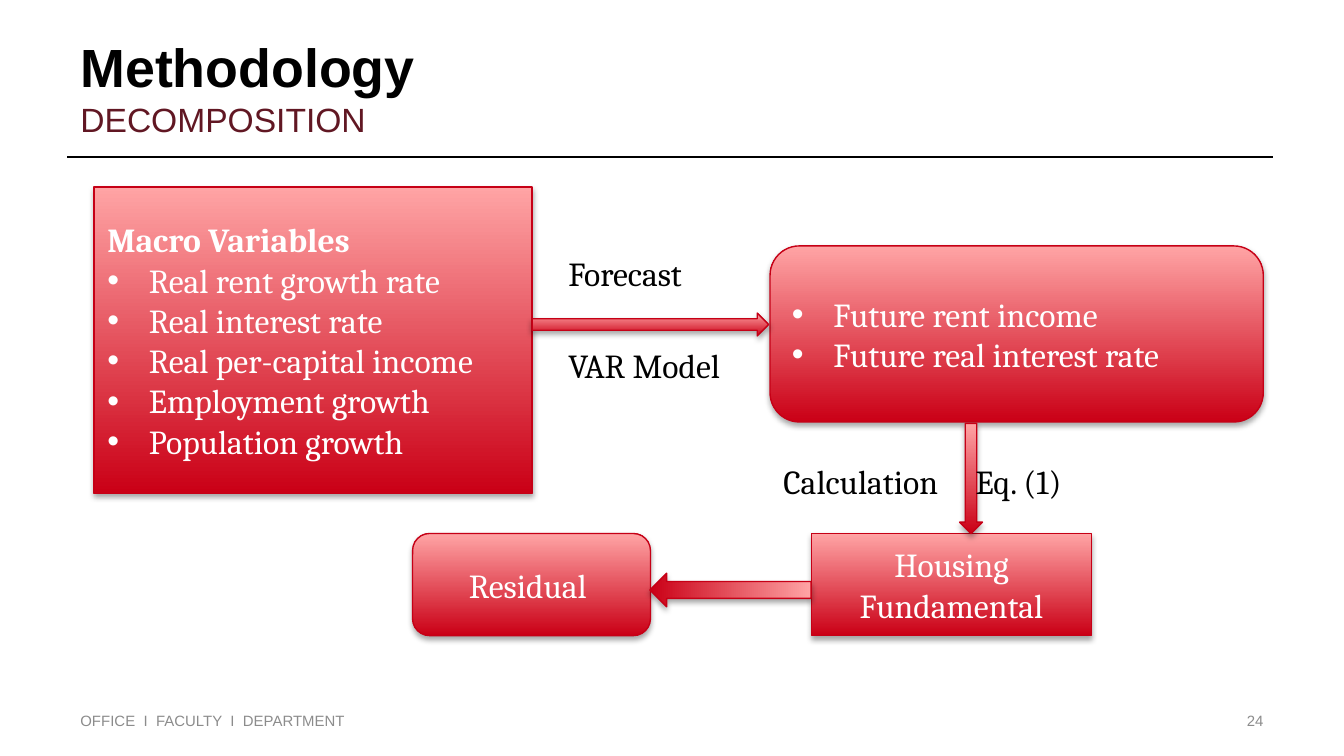
import pptx
import pptx.util
import pptx.dml.color
import pptx.enum.shapes
import pptx.enum.text
import pptx.oxml
import pptx.oxml.ns
from lxml import etree

Inches = pptx.util.Inches
Pt = pptx.util.Pt
RGB = pptx.dml.color.RGBColor.from_string
Shape = pptx.enum.shapes.MSO_SHAPE
Align = pptx.enum.text.PP_ALIGN
Anchor = pptx.enum.text.MSO_ANCHOR
qn = pptx.oxml.ns.qn

COLORS = {
    "black": "000000",
    "white": "FFFFFF",
    "gray": "8C8C8C",
    "maroon": "611723",
    "red": "CA0016",
    "pink": "FFA4A5",
    "outline": "C60016",
}
INDENT = Inches(0.31)

deck = pptx.Presentation()
deck.slide_width = Inches(10)
deck.slide_height = Inches(10 * 9 / 16)
slide = deck.slides.add_slide(deck.slide_layouts[6])


def write(shape, lines, font="Cambria", size=18, color="black", bold=False, align=Align.LEFT,
          anchor=Anchor.MIDDLE, bullets_from=None, gap=0, tab=None, inset=0.1):
    """Fill a shape with one paragraph per line; gap is the space between them in points."""
    frame = shape.text_frame
    frame.word_wrap = True
    frame.vertical_anchor = anchor
    frame.margin_left = Inches(inset)
    for i, line in enumerate(lines):
        paragraph = frame.paragraphs[0] if i == 0 else frame.add_paragraph()
        paragraph.text = line
        paragraph.alignment = align
        if i and gap:
            paragraph.space_before = Pt(gap)
        properties = paragraph._p.get_or_add_pPr()
        bulleted = bullets_from is not None and i >= bullets_from
        if bulleted:
            properties.set("marL", str(INDENT))
            properties.set("indent", str(-INDENT))
            etree.SubElement(properties, qn("a:buFont"), typeface="Arial")
            etree.SubElement(properties, qn("a:buChar"), char="•")
        if tab:
            stops = etree.SubElement(properties, qn("a:tabLst"))
            etree.SubElement(stops, qn("a:tab"), pos=str(Inches(tab)), algn="l")
        paragraph.font.name = font
        paragraph.font.size = Pt(size)
        paragraph.font.bold = bold and not bulleted
        paragraph.font.color.rgb = RGB(COLORS[color])


def add_glossy(kind, *place):
    """Add a shape with the red gradient, thin outline and soft shadow."""
    shape = slide.shapes.add_shape(kind, *map(Inches, place))
    shape.fill.gradient()
    shape.fill.gradient_angle = 90
    for stop, name in zip(shape.fill.gradient_stops, ("red", "pink")):
        stop.color.rgb = RGB(COLORS[name])
    shape.line.color.rgb = RGB(COLORS["outline"])
    shape.line.width = Pt(0.75)
    shape.shadow.inherit = False
    effects = shape._element.spPr.find(qn("a:effectLst"))
    shadow = etree.SubElement(effects, qn("a:outerShdw"), blurRad=str(Pt(3.1)),
                              dist=str(Pt(1.8)), dir="5400000", rotWithShape="0")
    tint = etree.SubElement(shadow, qn("a:srgbClr"), val=COLORS["black"])
    etree.SubElement(tint, qn("a:alpha"), val="35000")
    return shape


# Header rule
rule = slide.shapes.add_connector(pptx.enum.shapes.MSO_CONNECTOR.STRAIGHT, Inches(0.5),
                                  Inches(1.17), Inches(9.47), Inches(1.17))
rule.line.color.rgb = RGB(COLORS["black"])
rule.line.width = Pt(1)
etree.SubElement(rule._element.spPr, qn("a:effectLst"))

# Flow boxes
boxes = [
    (Shape.RECTANGLE, (0.7, 1.39, 3.26, 2.28),
     ["Macro Variables", "Real rent growth rate", "Real interest rate",
      "Real per-capital income", "Employment growth", "Population growth"],
     dict(bold=True, bullets_from=1)),
    (Shape.ROUNDED_RECTANGLE, (5.73, 1.83, 3.67, 1.31),
     ["Future rent income", "Future real interest rate"], dict(bullets_from=0)),
    (Shape.RECTANGLE, (6.04, 3.97, 2.08, 0.76), ["Housing Fundamental"],
     dict(align=Align.CENTER)),
    (Shape.ROUNDED_RECTANGLE, (3.07, 3.97, 1.77, 0.76), ["Residual "],
     dict(align=Align.CENTER)),
]
for kind, place, lines, style in boxes:
    write(add_glossy(kind, *place), lines, color="white", **style)

# Block arrows between the boxes
add_glossy(Shape.RIGHT_ARROW, 3.96, 2.33, 1.76, 0.17)
add_glossy(Shape.DOWN_ARROW, 7.14, 3.15, 0.17, 0.82)
residual_arrow = add_glossy(Shape.DOWN_ARROW, 5.31, 3.79, 0.25, 1.2)
residual_arrow.rotation = 90

# Heading, arrow labels and footer
heading = dict(font="Arial")
footer = dict(font="Arial", size=8, color="gray")
texts = [
    ((0.5, 0.23, 7, 0.53), ["Methodology"], dict(heading, size=28.8, bold=True)),
    ((0.5, 0.69, 7, 0.44), ["DECOMPOSITION"],
     dict(heading, color="maroon", anchor=Anchor.TOP)),
    ((3.96, 1.83, 1.76, 1.09), ["Forecast", "VAR Model"],
     dict(anchor=Anchor.TOP, gap=27.7, inset=0.27)),
    ((5.73, 3.38, 2.68, 0.59), ["Calculation\tEq. (1)"], dict(anchor=Anchor.TOP, tab=1.43)),
    ((0.5, 5.21, 2.33, 0.3), ["OFFICE  I  FACULTY  I  DEPARTMENT"], footer),
    ((7.17, 5.21, 2.33, 0.3), ["24"], dict(footer, align=Align.RIGHT)),
]
for place, lines, style in texts:
    write(slide.shapes.add_textbox(*map(Inches, place)), lines, **style)

deck.save("out.pptx")
